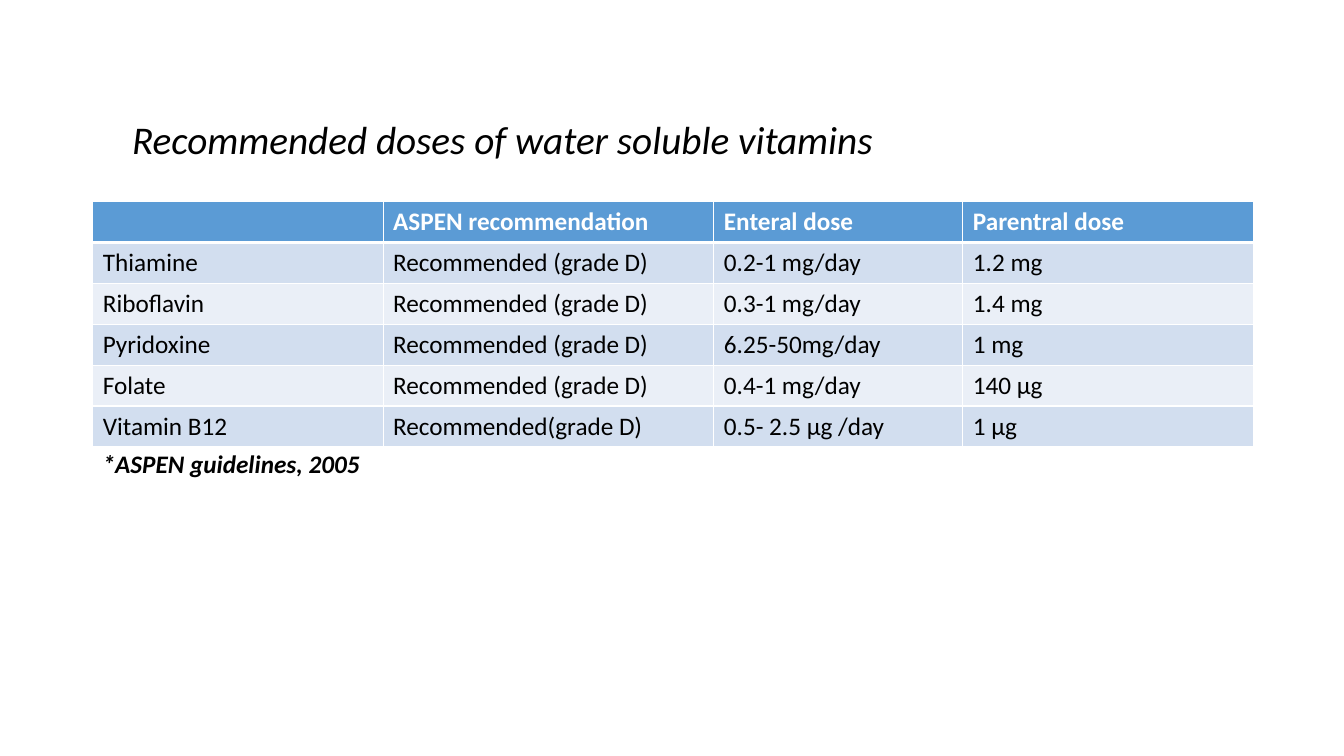
from lxml import etree
from pptx import Presentation
from pptx import util as u
from pptx.dml.color import RGBColor
from pptx.enum import text
from pptx.oxml import ns

COLOURS = {
    "white": "FFFFFF",
    "ink": "000000",
    "header": "5B9BD5",
    "odd": "D2DEEF",
    "even": "EAEFF7",
}
FONT = "Calibri"

VITAMIN_DOSES = [
    ("", "ASPEN recommendation", "Enteral dose", "Parentral dose"),
    ("Thiamine", "Recommended (grade D)", "0.2-1 mg/day", "1.2 mg"),
    ("Riboflavin", "Recommended (grade D)", "0.3-1 mg/day", "1.4 mg"),
    ("Pyridoxine", "Recommended (grade D)", "6.25-50mg/day", "1 mg"),
    ("Folate", "Recommended (grade D)", "0.4-1 mg/day", "140 μg"),
    ("Vitamin B12", "Recommended(grade D)", "0.5- 2.5 μg /day", "1 μg"),
]
COLUMN_WIDTHS = (2.88, 3.28, 2.47, 2.88)
ROW_HEIGHT = 0.4


class VitaminSlide:
    """Holds the slide and the style shared by its elements."""

    def __init__(self, deck):
        self.slide = deck.slides.add_slide(deck.slide_layouts[5])

    def add_words(self, frame, words, colour="ink", **font_format):
        paragraph = frame.paragraphs[0]
        paragraph.alignment = text.PP_ALIGN.LEFT
        if not words:
            return
        run = paragraph.add_run()
        run.text = words
        for name, value in {"name": FONT, **font_format}.items():
            setattr(run.font, name, value)
        run.font.color.rgb = RGBColor.from_string(COLOURS[colour])

    def set_frame(self, frame):
        frame_format = {
            "word_wrap": True,
            "auto_size": text.MSO_AUTO_SIZE.NONE,
            "vertical_anchor": text.MSO_ANCHOR.TOP,
        }
        for name, value in frame_format.items():
            setattr(frame, name, value)

    def title(self, words, left, top, width, height):
        heading = self.slide.shapes.title
        place = {"left": left, "top": top, "width": width, "height": height}
        for name, value in place.items():
            setattr(heading, name, u.Inches(value))
        self.set_frame(heading.text_frame)
        self.add_words(heading.text_frame, words, size=u.Pt(28), italic=True)

    def note(self, words, *place):
        footnote = self.slide.shapes.add_textbox(*map(u.Inches, place))
        self.set_frame(footnote.text_frame)
        self.add_words(footnote.text_frame, words,
                       size=u.Pt(18), bold=True, italic=True)

    def borders(self, cell, row):
        # Side lines go before the fill, in schema order
        widths = {"lnL": 1, "lnR": 1,
                  "lnT": 3 if row == 1 else 1,
                  "lnB": 3 if row == 0 else 1}
        properties = cell._tc.get_or_add_tcPr()
        for position, (side, width) in enumerate(widths.items()):
            line = etree.Element(ns.qn(f"a:{side}"), w=str(u.Pt(width)))
            fill = etree.SubElement(line, ns.qn("a:solidFill"))
            etree.SubElement(fill, ns.qn("a:srgbClr"), val=COLOURS["white"])
            properties.insert(position, line)

    def table(self, records, widths, left, top):
        doses = self.slide.shapes.add_table(
            len(records), len(widths), u.Inches(left), u.Inches(top),
            u.Inches(sum(widths)), u.Inches(ROW_HEIGHT * len(records))).table
        for column, width in zip(doses.columns, widths):
            column.width = u.Inches(width)
        for row, record in enumerate(records):
            is_header = row == 0
            band = "header" if is_header else "odd" if row % 2 else "even"
            for column, words in enumerate(record):
                cell = doses.cell(row, column)
                cell.fill.solid()
                cell.fill.fore_color.rgb = RGBColor.from_string(COLOURS[band])
                self.borders(cell, row)
                self.add_words(cell.text_frame, words,
                               "white" if is_header else "ink",
                               size=u.Pt(18), bold=is_header)


def main():
    deck = Presentation()
    deck.slide_width, deck.slide_height = u.Inches(13.33), u.Inches(7.5)
    page = VitaminSlide(deck)

    # Heading, dose table and its source note
    page.title("Recommended doses of water soluble vitamins", 1.21, 1.09, 9.2, 0.57)
    page.table(VITAMIN_DOSES, COLUMN_WIDTHS, 0.92, 2)
    page.note("*ASPEN guidelines, 2005", 0.92, 4.4, 3.37, 0.4)

    deck.save("out.pptx")


if __name__ == "__main__":
    main()
